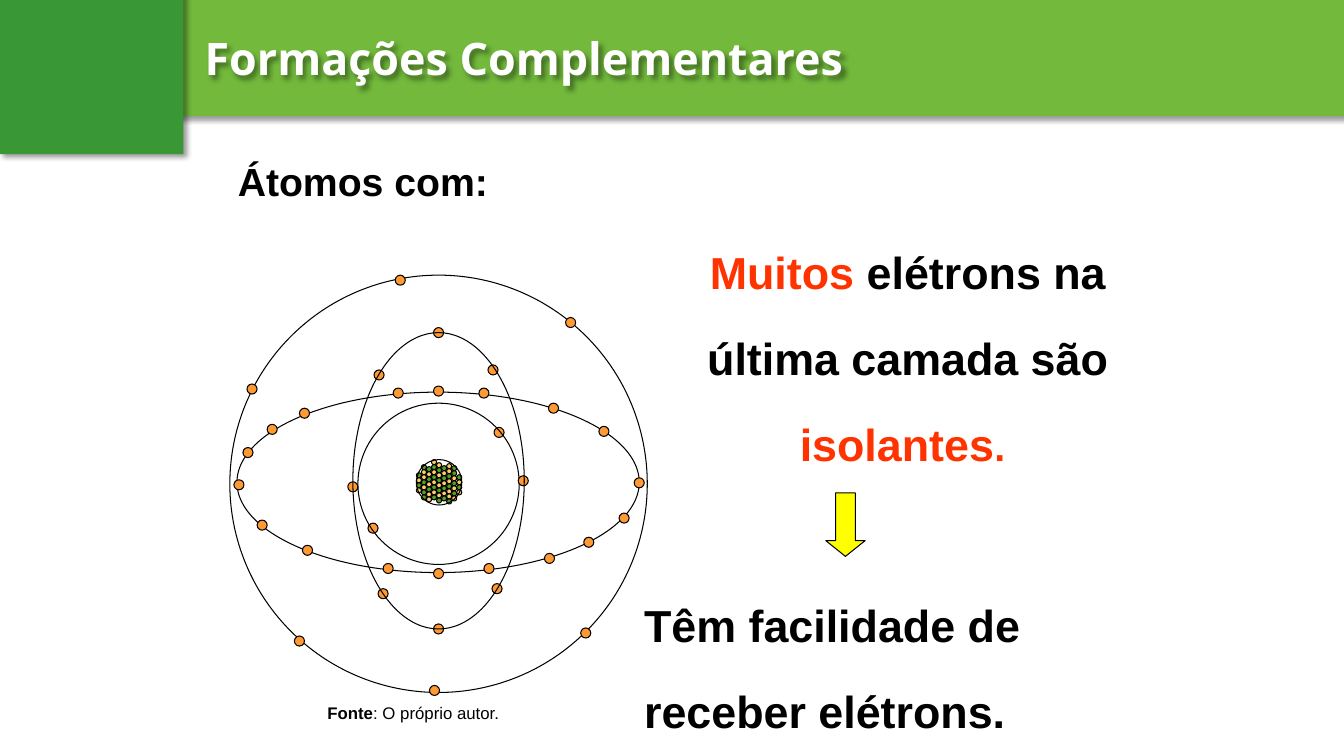
from lxml.etree import SubElement
from pptx import Presentation
from pptx.dml.color import RGBColor
from pptx.enum.shapes import MSO_SHAPE
from pptx.enum.text import MSO_ANCHOR, MSO_AUTO_SIZE, PP_ALIGN
from pptx.oxml.ns import qn
from pptx.util import Inches, Pt


def add_figure(kind, left, top, width, height, fill=None, outlined=True):
    shape = slide.shapes.add_shape(
        kind, Inches(left), Inches(top), Inches(width), Inches(height))
    shape.shadow.inherit = False
    if fill:
        shape.fill.solid()
        shape.fill.fore_color.rgb = RGBColor.from_string(fill)
    else:
        shape.fill.background()
    if outlined:
        shape.line.color.rgb = RGBColor.from_string("000000")
        shape.line.width = Pt(0.75)
    else:
        shape.line.fill.background()
    return shape


def add_shadow(shape):
    shape.shadow.inherit = False
    effects = shape._element.spPr.find(qn("a:effectLst"))
    shadow = SubElement(effects, qn("a:outerShdw"), blurRad=str(Pt(4)),
                        dist=str(Pt(3)), dir="2700000", algn="tl", rotWithShape="0")
    color = SubElement(shadow, qn("a:srgbClr"), val="000000")
    SubElement(color, qn("a:alpha"), val="40000")


presentation = Presentation()
presentation.slide_width = Inches(13.33)
presentation.slide_height = Inches(7.5)
slide = presentation.slides.add_slide(presentation.slide_layouts[5])

header = add_figure(MSO_SHAPE.RECTANGLE, 1.41, 0, 11.93, 1.15, "72B93C", False)
add_shadow(header)

title = slide.shapes.title
title.left, title.top = Inches(1.93), Inches(0.25)
title.width, title.height = Inches(10.82), Inches(0.64)
title.text_frame.vertical_anchor = MSO_ANCHOR.MIDDLE
title.text_frame.text = "Formações Complementares"
paragraph = title.text_frame.paragraphs[0]
paragraph.alignment = PP_ALIGN.LEFT
paragraph.font.name = "Open Sans"
paragraph.font.size = Pt(32)
paragraph.font.bold = True
paragraph.font.color.rgb = RGBColor.from_string("FFFFFF")
add_shadow(title)
header._element.addnext(title._element)

corner = add_figure(MSO_SHAPE.RECTANGLE, 0, -0.08, 1.82, 1.61, "399736", False)
add_shadow(corner)

nucleon_colors = {"G": "54A021", "Y": "FFCC66"}
nucleon_columns = [
    (4.69, "GYGY"),
    (4.61, "GYYGYGG"),
    (4.63, "GYGYGYY"),
    (4.56, "YGYGYGYG"),
    (4.59, "YGYGYGYG"),
    (4.62, "GYGYGYG"),
    (4.6, "YYGYGYYG"),
    (4.62, "GGYGYGY"),
    (4.71, "GYGY"),
]
for column, (top, nucleons) in enumerate(nucleon_columns):
    for row, nucleon in enumerate(nucleons):
        add_figure(MSO_SHAPE.OVAL, 4.13 + 0.05 * column, top + 0.05 * row,
                   0.05, 0.05, nucleon_colors[nucleon])
add_figure(MSO_SHAPE.OVAL, 4.13, 4.56, 0.45, 0.45)

orbits = [
    ((3.55, 4, 1.6, 1.6), [(3.65, 5.19), (4.9, 4.24)]),
    ((3.5, 3.3, 1.7, 2.94), [
        (4.3, 3.25), (4.3, 6.19), (3.75, 5.84), (4.88, 5.79),
        (3.71, 3.67), (4.84, 3.62), (3.45, 4.78), (5.14, 4.72)]),
    ((2.35, 3.89, 3.99, 1.79), [
        (2.97, 4.05), (6.29, 4.74), (2.32, 4.76), (4.3, 3.83), (4.3, 5.64),
        (5.44, 4), (5.4, 5.49), (3, 5.41), (2.55, 5.16), (2.41, 4.44),
        (5.94, 4.23), (6.14, 5.09), (4.8, 5.59), (4.75, 3.85), (3.9, 3.85),
        (3.8, 5.59), (5.79, 5.33), (2.65, 4.21)]),
    ((2.28, 2.73, 4.14, 4.14), [
        (5.61, 3.15), (2.92, 6.31), (4.26, 6.8), (3.92, 2.73),
        (5.76, 6.23), (2.45, 3.81)]),
]
for orbit, electrons in orbits:
    if orbit[0] < 3:
        add_figure(MSO_SHAPE.OVAL, *orbit)
    for left, top in electrons:
        add_figure(MSO_SHAPE.OVAL, left, top, 0.1, 0.1, "FF9933")
    if orbit[0] > 3:
        add_figure(MSO_SHAPE.OVAL, *orbit)

add_figure(MSO_SHAPE.DOWN_ARROW, 8.19, 4.89, 0.39, 0.63, "FFFF00").adjustments[1] = 0.4

texts = [
    ((2.26, 1.23, 3.42, 0.57), PP_ALIGN.LEFT, 1.6, 0.05,
     [("Átomos com:", 28, "000000", True)]),
    ((6.34, 2.06, 5.33, 2.36), PP_ALIGN.CENTER, 1.6, 0.05,
     [("Muitos ", 32, "FF3300", True),
      ("elétrons na última camada são ", 32, "000000", True),
      ("isolantes", 32, "FF3300", True),
      (". ", 28, "FF3300", True)]),
    ((6.29, 5.56, 5.08, 1.5), PP_ALIGN.LEFT, 1.6, 0.05,
     [("Têm facilidade de receber elétrons.", 32, "000000", True)]),
    ((2.52, 6.87, 3.16, 0.4), PP_ALIGN.CENTER, 1.0, 0.1,
     [("Fonte", 12, "000000", True),
      (": O próprio autor.", 12, "000000", False)]),
]
for box, alignment, spacing, margin, runs in texts:
    frame = slide.shapes.add_textbox(*[Inches(length) for length in box]).text_frame
    frame.word_wrap = True
    frame.auto_size = MSO_AUTO_SIZE.SHAPE_TO_FIT_TEXT
    frame.margin_top = frame.margin_bottom = Inches(margin)
    paragraph = frame.paragraphs[0]
    paragraph.alignment = alignment
    paragraph.line_spacing = spacing
    for text, size, color, bold in runs:
        run = paragraph.add_run()
        run.text = text
        run.font.name = "Arial"
        run.font.size = Pt(size)
        run.font.bold = bold
        run.font.color.rgb = RGBColor.from_string(color)

presentation.save("out.pptx")
